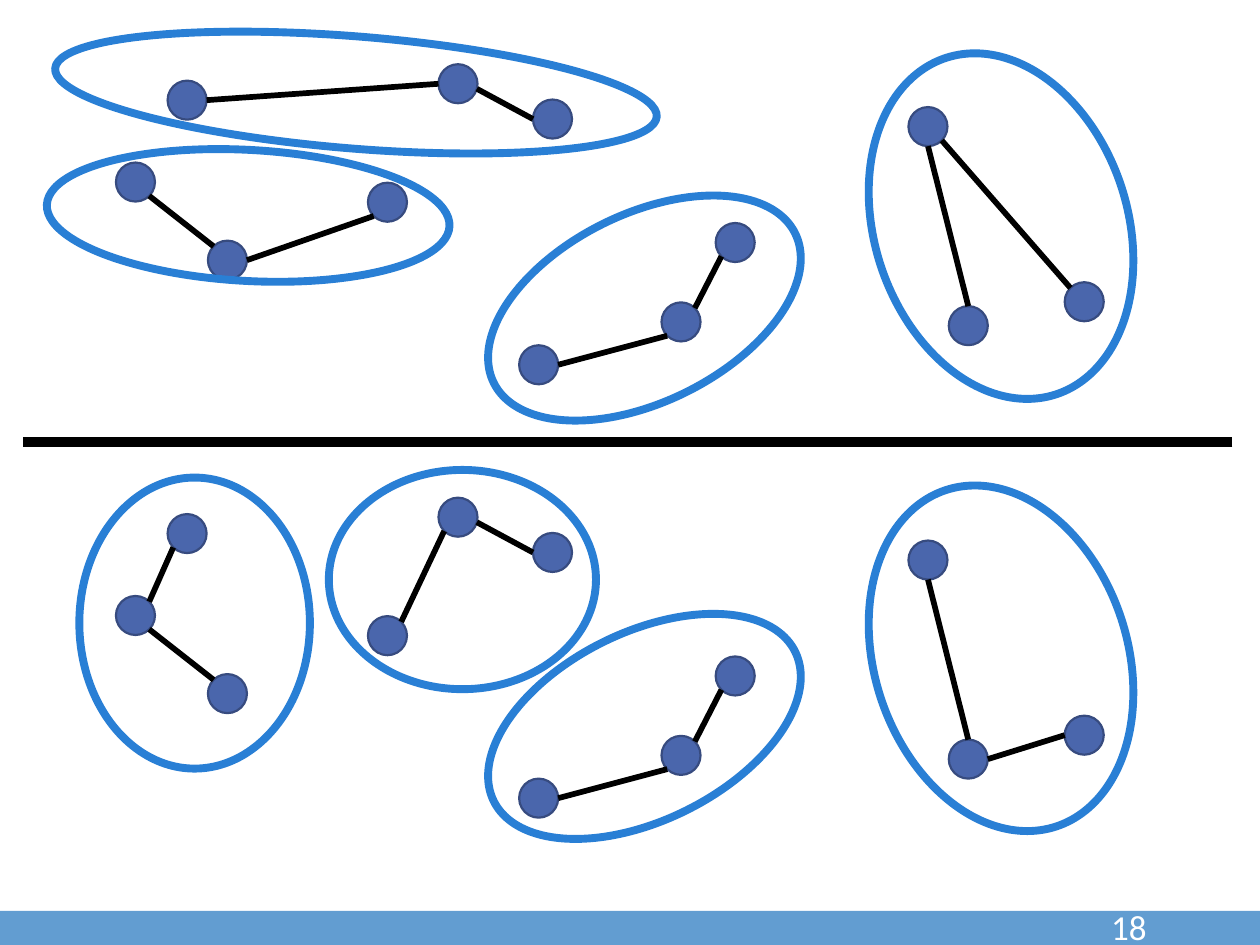
from dataclasses import dataclass
from math import cos, radians, sin

from lxml import etree
from pptx import Presentation
from pptx.dml.color import RGBColor
from pptx.enum import shapes as kinds, text as texts
from pptx.oxml.ns import qn
from pptx.util import Inches, Pt

COLORS = {
    "bar": "629DD1",
    "dot": "4A66AC",
    "rim": "374B7F",
    "ring": "297FD5",
    "edge": "000000",
    "page": "FFFFFF",
}
SIZE = 0.31  # dot diameter
DROP = 3.44  # from the upper graph to the lower one
E, SE, S, SW, W, NW, N, NE = range(0, 360, 45)  # clockwise from east


@dataclass
class Ring:
    left: float
    top: float
    width: float
    height: float
    turn: float = 0


@dataclass
class Edge:
    """Line from one dot to another, each end at an angle on the rim."""
    start: str
    leave: float
    end: str
    reach: float


@dataclass
class Graph:
    drop: float
    edges: list[Edge]
    rings: list[Ring]


DOTS = {
    "A": (1.33, 0.64), "B": (0.92, 1.29), "C": (1.65, 1.91),
    "D": (3.48, 0.51), "E": (2.92, 1.45), "F": (4.23, 0.79),
    "G": (4.12, 2.74), "H": (5.25, 2.40), "I": (5.68, 1.77),
    "J": (7.21, 0.85), "K": (8.45, 2.24), "L": (7.53, 2.43),
}
SHARED = [
    Edge("C", NW, "B", SE),
    Edge("D", 15, "F", W),
    Edge("I", SW, "H", NE),
    Edge("G", E, "H", SW),
    Edge("J", S, "L", N),
]
LOWER = Graph(
    DROP,
    SHARED + [Edge("A", SW, "B", NE), Edge("D", SW, "E", NE), Edge("K", W, "L", E)],
    [
        Ring(0.63, 3.79, 1.83, 2.31),
        Ring(2.61, 3.73, 2.12, 1.74),
        Ring(3.78, 5.02, 2.67, 1.49, 333.6),
        Ring(6.94, 3.82, 2.01, 2.81, 341.9),
    ],
)
UPPER = Graph(
    0,
    SHARED + [Edge("C", E, "E", SW), Edge("D", W, "A", E), Edge("K", NW, "J", SE)],
    [
        Ring(1.45, 0.11, 1.04, 3.2, 273.1),
        Ring(0.43, 0.29, 4.79, 0.89, 4.6),
        Ring(3.78, 1.7, 2.67, 1.49, 333.6),
        Ring(6.94, 0.39, 2.01, 2.81, 341.9),
    ],
)


def color(name: str) -> RGBColor:
    return RGBColor.from_string(COLORS[name])


def add_shape(slide, kind, box, fill=None, line=None, weight=0.0):
    shape = slide.shapes.add_shape(kind, *map(Inches, box))
    shape.shadow.inherit = False
    if fill:
        shape.fill.solid()
        shape.fill.fore_color.rgb = color(fill)
    else:
        shape.fill.background()
    if line:
        shape.line.color.rgb = color(line)
        shape.line.width = Pt(weight)
    else:
        shape.line.fill.background()
    return shape


def add_line(slide, start, end, weight: float) -> None:
    line = slide.shapes.add_connector(
        kinds.MSO_CONNECTOR.STRAIGHT, *map(Inches, (*start, *end)))
    line.line.color.rgb = color("edge")
    line.line.width = Pt(weight)
    etree.SubElement(line._element.spPr, qn("a:effectLst"))


def rim_point(name: str, angle: float, drop: float) -> tuple[float, float]:
    left, top = DOTS[name]
    half = SIZE / 2
    turn = radians(angle)
    return left + half + half * cos(turn), top + drop + half + half * sin(turn)


def add_graph(slide, graph: Graph) -> None:
    oval = kinds.MSO_SHAPE.OVAL
    for left, top in DOTS.values():
        add_shape(slide, oval, (left, top + graph.drop, SIZE, SIZE), "dot", "rim", 1.25)
    for edge in graph.edges:
        add_line(slide, rim_point(edge.start, edge.leave, graph.drop),
                 rim_point(edge.end, edge.reach, graph.drop), 3.25)
    for ring in graph.rings:
        box = (ring.left, ring.top, ring.width, ring.height)
        add_shape(slide, oval, box, line="ring", weight=4.5).rotation = ring.turn


def add_footer(slide) -> None:
    add_shape(slide, kinds.MSO_SHAPE.RECTANGLE, (0, 7.23, 10, 0.27), "bar")
    frame = slide.shapes.add_textbox(*map(Inches, (8.4, 7.23, 0.8, 0.24))).text_frame
    frame.word_wrap = True
    frame.vertical_anchor = texts.MSO_ANCHOR.MIDDLE
    para = frame.paragraphs[0]
    para.text = "18"
    para.alignment = texts.PP_ALIGN.RIGHT
    para.font.name = "Calibri"
    para.font.size = Pt(20)
    para.font.color.rgb = color("page")


def main() -> None:
    deck = Presentation()
    deck.slide_width, deck.slide_height = Inches(10), Inches(7.5)
    slide = deck.slides.add_slide(deck.slide_layouts[6])
    add_footer(slide)
    for graph in (LOWER, UPPER):
        add_graph(slide, graph)
    add_line(slide, (9.78, 3.51), (0.18, 3.51), 6)
    deck.save("out.pptx")


if __name__ == "__main__":
    main()
